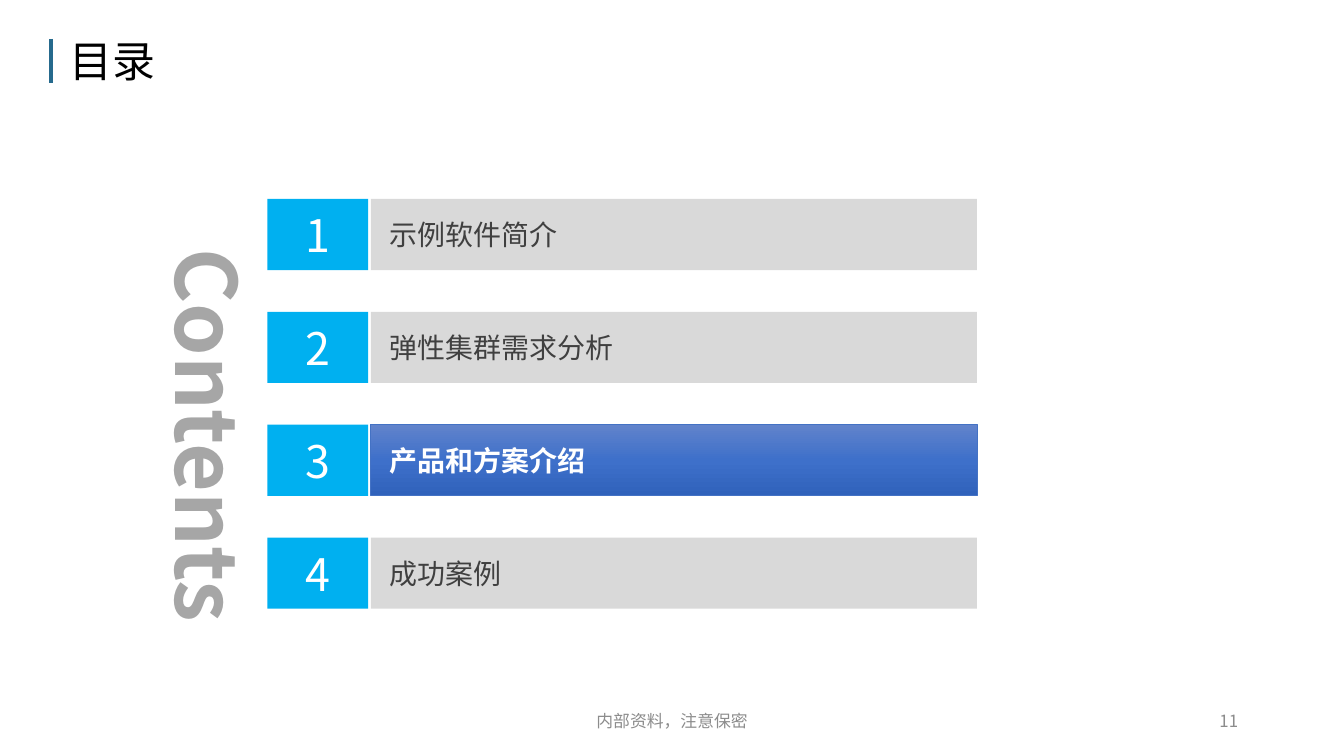
from lxml import etree
from pptx import Presentation
from pptx import util as u
from pptx.dml.color import RGBColor
from pptx.enum import shapes, text
from pptx.oxml.ns import qn

W = 10
H = W * 9 / 16
FONT = "Noto Sans CJK SC"
COLORS = {
    "accent": "00507A", "white": "FFFFFF", "black": "000000",
    "number": "00B0F0", "bar": "D9D9D9", "bar_text": "404040",
    "active_line": "4472C4", "footer": "8C8C8C", "side": "A6A6A6",
}
ACTIVE_STOPS = [(0, "6183CB"), (50, "3E70CA"), (100, "3062BB")]
ITEMS = ["示例软件简介", "弹性集群需求分析", "产品和方案介绍", "成功案例"]
ACTIVE = 2
TOP, PITCH, ROW_H = 1.48, 0.84, 0.53
NUMBER_X, NUMBER_W = 1.99, 0.75
BAR_X, BAR_W = 2.76, 4.51


def rgb(name):
    return RGBColor.from_string(COLORS[name])


def box(*lengths):
    return [u.Inches(v) for v in lengths]


def write(sp, words, size, color, align=None, bold=False,
          anchor=text.MSO_ANCHOR.MIDDLE):
    tf = sp.text_frame
    tf.word_wrap = True
    tf.vertical_anchor = anchor
    tf.text = words
    p = tf.paragraphs[0]
    p.alignment = align
    r = p.runs[0]
    r.font.size = u.Pt(size)
    r.font.bold = bold
    r.font.color.rgb = rgb(color)
    r.font.name = FONT
    etree.SubElement(r.font._element, qn("a:ea"), typeface=FONT)
    return tf


def add_rect(s, at, color):
    sp = s.shapes.add_shape(shapes.MSO_SHAPE.RECTANGLE, *box(*at))
    sp.shadow.inherit = False
    sp.fill.solid()
    sp.fill.fore_color.rgb = rgb(color)
    sp.line.fill.background()
    return sp


def add_text(s, at, *args, **kwargs):
    return write(s.shapes.add_textbox(*box(*at)), *args, **kwargs)


def highlight(sp):
    sp.fill.gradient()
    sp.fill.gradient_angle = 270
    stops = sp._element.spPr.find(qn("a:gradFill")).find(qn("a:gsLst"))
    for stop in list(stops):
        stops.remove(stop)
    for pos, color in ACTIVE_STOPS:
        stop = etree.SubElement(stops, qn("a:gs"), pos=str(pos * 1000))
        etree.SubElement(stop, qn("a:srgbClr"), val=color)
    sp.line.color.rgb = rgb("active_line")
    sp.line.width = u.Pt(0.5)


def add_header(s):
    line = s.shapes.add_connector(shapes.MSO_CONNECTOR.STRAIGHT,
                                  *box(0.38, 0.29, 0.38, 0.62))
    line.line.color.rgb = rgb("accent")
    line.line.width = u.Pt(2.25)
    etree.SubElement(line._element.spPr, qn("a:effectLst"))
    veil = add_rect(s, (0.2, 0.06, W - 0.2, 0.59), "white")
    color = veil._element.spPr.find(qn("a:solidFill"))[0]
    etree.SubElement(color, qn("a:alpha"), val="15000")

    title = s.shapes.title
    title.left, title.top, title.width, title.height = box(0.45, 0.25, 4.46, 0.45)
    tf = write(title, "目录", 23, "black", text.PP_ALIGN.LEFT)
    tf.auto_size = text.MSO_AUTO_SIZE.NONE
    tf.margin_left = tf.margin_right = u.Inches(0.07)
    tf.margin_top = tf.margin_bottom = u.Inches(0.04)
    tf.paragraphs[0].line_spacing = 0.9
    s.shapes._spTree.append(title._element)


def add_item(s, i, words):
    top = TOP + i * PITCH
    number = add_rect(s, (NUMBER_X, top, NUMBER_W, ROW_H), "number")
    write(number, str(i + 1), 24, "white", text.PP_ALIGN.CENTER)
    bar = add_rect(s, (BAR_X, top, BAR_W, ROW_H), "bar")
    active = i == ACTIVE
    if active:
        highlight(bar)
    tf = write(bar, words, 15, "white" if active else "bar_text",
               text.PP_ALIGN.LEFT, active)
    tf.margin_left = u.Inches(0.14)


def main():
    prs = Presentation()
    prs.slide_width, prs.slide_height = box(W, H)
    s = prs.slides.add_slide(prs.slide_layouts[5])
    add_header(s)
    add_text(s, (3.31, 5.21, 3.38, 0.3), "内部资料，注意保密", 9, "footer",
             text.PP_ALIGN.CENTER)
    add_text(s, (7.06, 5.21, 2.25, 0.3), "11", 9, "footer", text.PP_ALIGN.RIGHT)
    for i, words in enumerate(ITEMS):
        add_item(s, i, words)
    tf = add_text(s, (1.02, 1.75, 0.96, 3.81), "Contents", 45, "side",
                  bold=True, anchor=text.MSO_ANCHOR.TOP)
    tf._txBody.bodyPr.set("vert", "eaVert")
    prs.save("out.pptx")


if __name__ == "__main__":
    main()
